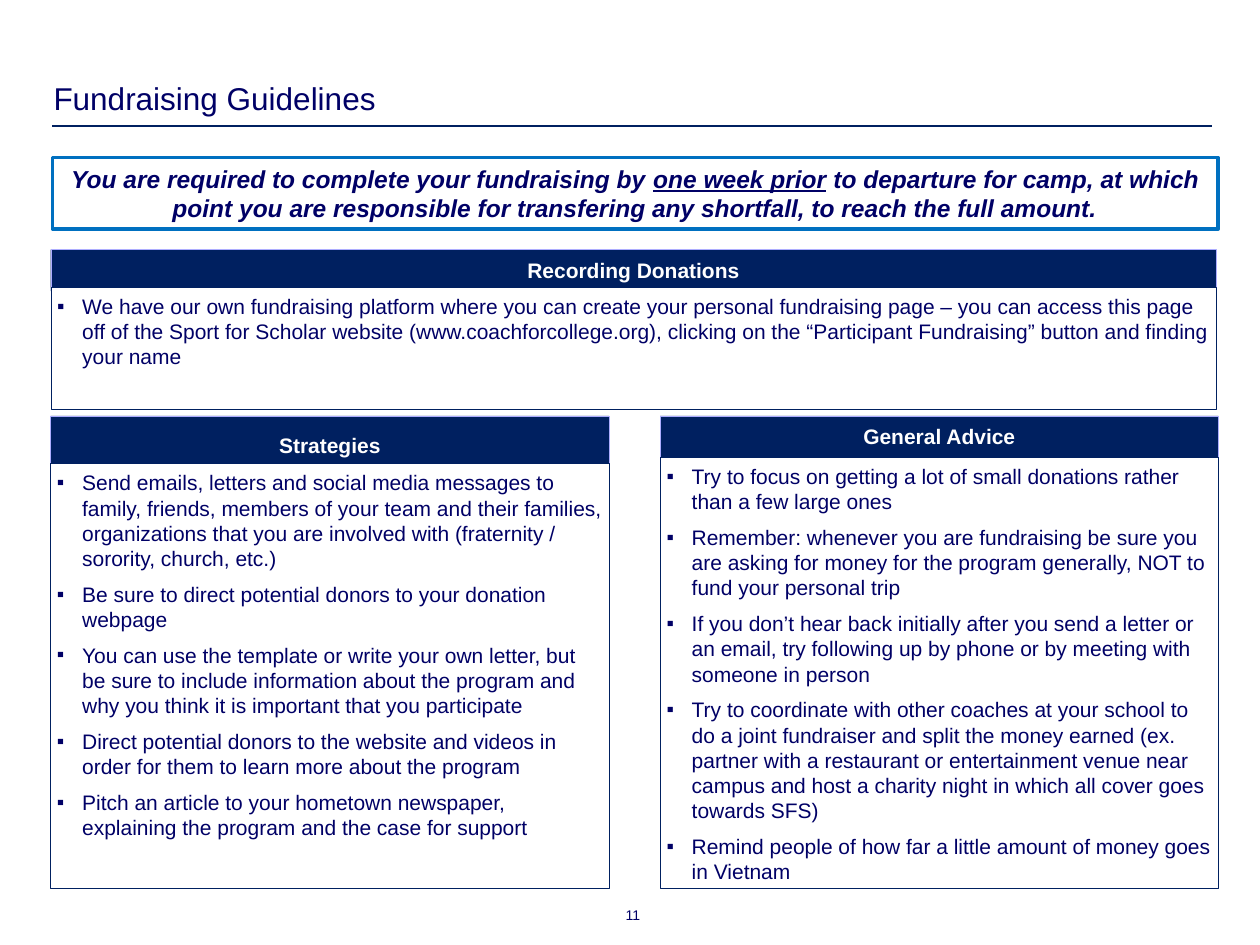
from lxml import etree
from pptx import Presentation
from pptx.dml.color import RGBColor
from pptx.enum import shapes, text
from pptx.oxml import ns
from pptx.util import Pt

INK = RGBColor(0x00, 0x00, 0x66)
NAVY = RGBColor(0x00, 0x20, 0x60)
LILAC = RGBColor(0xAD, 0xAD, 0xFF)
BLUE = RGBColor(0x00, 0x70, 0xC0)
WHITE = RGBColor(0xFF, 0xFF, 0xFF)

DONATIONS = [
    "We have our own fundraising platform where you can create your personal fundraising page – "
    "you can access this page off of the Sport for Scholar website (www.coachforcollege.org), "
    "clicking on the “Participant Fundraising” button and finding your name",
]
STRATEGIES = [
    "Send emails, letters and social media messages to family, friends, members of your team and "
    "their families, organizations that you are involved with (fraternity / sorority, church, etc.)",
    "Be sure to direct potential donors to your donation webpage",
    "You can use the template or write your own letter, but be sure to include information about "
    "the program and why you think it is important that you participate",
    "Direct potential donors to the website and videos in order for them to learn more about the program",
    "Pitch an article to your hometown newspaper, explaining the program and the case for support",
]
ADVICE = [
    "Try to focus on getting a lot of small donations rather than a few large ones",
    "Remember: whenever you are fundraising be sure you are asking for money for the program "
    "generally, NOT to fund your personal trip",
    "If you don’t hear back initially after you send a letter or an email, try following up by "
    "phone or by meeting with someone in person",
    "Try to coordinate with other coaches at your school to do a joint fundraiser and split the "
    "money earned (ex. partner with a restaurant or entertainment venue near campus and host a "
    "charity night in which all cover goes towards SFS)",
    "Remind people of how far a little amount of money goes in Vietnam",
]
NOTICE = [
    ("You are required to complete your fundraising by ", False),
    ("one week prior", True),
    (" to departure for camp, at which point you are responsible for transfering any shortfall, "
     "to reach the full amount.", False),
]


def set_font(font, size, color=INK, bold=False, italic=False):
    font.name = "Arial"
    font.size = Pt(size)
    font.color.rgb = color
    font.bold = bold
    font.italic = italic


def set_frame(frame, anchor, side, top):
    frame.word_wrap = True
    frame.vertical_anchor = anchor
    frame.margin_left = frame.margin_right = Pt(side)
    frame.margin_top = frame.margin_bottom = Pt(top)


def add_bullet(paragraph):
    properties = paragraph._p.get_or_add_pPr()
    properties.set("marL", str(Pt(14.4)))
    properties.set("indent", str(-Pt(14.4)))
    color = etree.SubElement(properties, ns.qn("a:buClr"))
    etree.SubElement(color, ns.qn("a:srgbClr")).set("val", str(INK))
    etree.SubElement(properties, ns.qn("a:buFont")).set("typeface", "Arial")
    etree.SubElement(properties, ns.qn("a:buChar")).set("char", "▪")


def add_box(slide, left, top, width, height, fill, line, weight):
    box = slide.shapes.add_shape(
        shapes.MSO_SHAPE.RECTANGLE, Pt(left), Pt(top), Pt(width), Pt(height))
    box.shadow.inherit = False
    if fill is None:
        box.fill.background()
    else:
        box.fill.solid()
        box.fill.fore_color.rgb = fill
    box.line.color.rgb = line
    box.line.width = Pt(weight)
    return box.text_frame


def add_label(slide, left, top, width, height, wording, size, align, anchor, side):
    frame = slide.shapes.add_textbox(Pt(left), Pt(top), Pt(width), Pt(height)).text_frame
    set_frame(frame, anchor, side, 0)
    frame.text = wording
    label = frame.paragraphs[0]
    label.alignment = align
    label.line_spacing = 0.95
    set_font(label.runs[0].font, size)


def add_heading(slide, left, top, width, height):
    add_label(slide, left - 3, top, width, height - 5, "Fundraising Guidelines", 18,
              text.PP_ALIGN.LEFT, text.MSO_ANCHOR.BOTTOM, 3.6)
    bottom = Pt(top + height)
    rule = slide.shapes.add_connector(
        shapes.MSO_CONNECTOR.STRAIGHT, Pt(left), bottom, Pt(left + width), bottom)
    rule.line.color.rgb = NAVY
    rule.line.width = Pt(1.5)
    etree.SubElement(rule._element.spPr, ns.qn("a:effectLst"))


def add_notice(slide, left, top, width, height):
    frame = add_box(slide, left, top, width, height, None, BLUE, 2.25)
    set_frame(frame, text.MSO_ANCHOR.TOP, 7.2, 3.6)
    sentence = frame.paragraphs[0]
    sentence.alignment = text.PP_ALIGN.CENTER
    for wording, underlined in NOTICE:
        run = sentence.add_run()
        run.text = wording
        set_font(run.font, 14, bold=True, italic=True)
        run.font.underline = underlined


def add_panel(slide, left, top, width, height, heading, points, header_height, body_offset):
    header = add_box(slide, left, top, width, header_height, NAVY, LILAC, 0.25)
    set_frame(header, text.MSO_ANCHOR.MIDDLE, 3.6, 3.6)
    header.text = heading
    header.paragraphs[0].alignment = text.PP_ALIGN.CENTER
    set_font(header.paragraphs[0].runs[0].font, 12, WHITE, bold=True)

    body = add_box(slide, left, top + body_offset, width, height - body_offset, WHITE, NAVY, 0.25)
    set_frame(body, text.MSO_ANCHOR.TOP, 3.6, 3.6)
    body.text = "\n".join(points)
    for index, point in enumerate(body.paragraphs):
        point.alignment = text.PP_ALIGN.LEFT
        if index:
            point.space_before = Pt(6)
        add_bullet(point)
        set_font(point.runs[0].font, 12)


def main():
    deck = Presentation()
    deck.slide_width, deck.slide_height = Pt(720), Pt(540)
    slide = deck.slides.add_slide(deck.slide_layouts[6])

    add_label(slide, 293.8, 519, 72, 9.4, "11", 8,
              text.PP_ALIGN.RIGHT, text.MSO_ANCHOR.TOP, 0)
    add_heading(slide, 30, 39, 662.5, 33)
    add_panel(slide, 29, 142.6, 666, 91.4, "Recording Donations", DONATIONS, 23.8, 21.6)
    add_panel(slide, 29, 237.6, 319, 270, "Strategies", STRATEGIES, 33.1, 27.4)
    add_panel(slide, 377.3, 237.6, 319, 270, "General Advice", ADVICE, 23.8, 23.8)
    add_notice(slide, 30, 90, 666, 40.8)

    deck.save("out.pptx")


if __name__ == "__main__":
    main()
